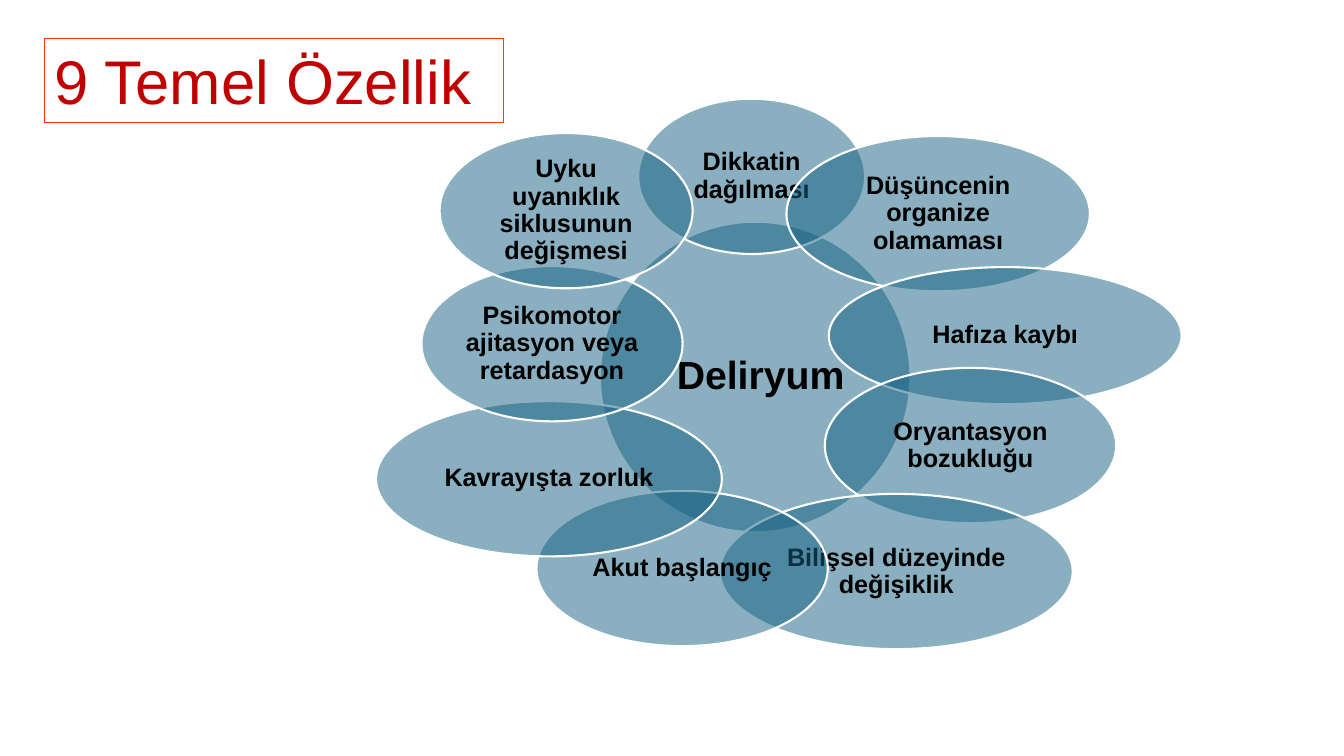
from lxml import etree
from pptx import Presentation
from pptx.dml.color import RGBColor
from pptx.enum.shapes import MSO_SHAPE
from pptx.enum.text import MSO_ANCHOR, MSO_AUTO_SIZE, PP_ALIGN
from pptx.oxml.ns import qn
from pptx.util import Inches, Pt

# Content
TITLE = "9 Temel Özellik"
CENTER = (" Deliryum", 5.95, 2.2, 3.08, 3.08)
# Features, clockwise from the top: text, left, top, width
FEATURES = [
    ("Dikkatin dağılması", 6.33, 0.98, 2.25),
    ("Düşüncenin organize olamaması", 7.8, 1.35, 3.01),
    ("Hafıza kaybı", 8.22, 2.65, 3.5),
    ("Oryantasyon bozukluğu", 8.18, 3.65, 2.89),
    ("Bilişsel düzeyinde değişiklik", 7.14, 4.9, 3.5),
    ("Akut başlangıç", 5.32, 4.87, 2.89),
    ("Kavrayışta zorluk", 3.73, 3.98, 3.43),
    ("Psikomotor ajitasyon veya retardasyon", 4.18, 2.64, 2.59),
    ("Uyku uyanıklık siklusunun değişmesi", 4.36, 1.32, 2.51),
]
FEATURE_HEIGHT = 1.54
HEIGHTS = {"Hafıza kaybı": 1.36}
FONT = "Arial"
COLORS = {"title": "C00000", "frame": "FF3300", "bubble": "156082",
          "outline": "FFFFFF", "text": "000000"}


def rgb(name):
    return RGBColor.from_string(COLORS[name])


def style(p, size, color, bold=False):
    p.font.name, p.font.size, p.font.bold = FONT, Pt(size), bold
    p.font.color.rgb = rgb(color)


def add_bubble(s, text, left, top, width, height, size, inset):
    sp = s.shapes.add_shape(MSO_SHAPE.OVAL, *map(Inches, (left, top, width, height)))
    sp.shadow.inherit = False
    sp.fill.solid()
    sp.fill.fore_color.rgb = rgb("bubble")
    color = sp.fill._xPr.find(qn("a:solidFill"))[0]
    etree.SubElement(color, qn("a:alpha"), val="50000")
    sp.line.color.rgb = rgb("outline")
    sp.line.width = Pt(1.5)

    tf = sp.text_frame
    tf.word_wrap = True
    tf.vertical_anchor = MSO_ANCHOR.MIDDLE
    tf.margin_left = tf.margin_right = tf.margin_top = tf.margin_bottom = Inches(inset)
    p = tf.paragraphs[0]
    p.text = text
    p.alignment = PP_ALIGN.CENTER
    p.line_spacing = 0.9
    style(p, size, "text", bold=True)


prs = Presentation()
prs.slide_width, prs.slide_height = Inches(13.33), Inches(7.5)
s = prs.slides.add_slide(prs.slide_layouts[5])

# Framed title
title = s.shapes.title
title.left, title.top, title.width, title.height = map(Inches, (0.44, 0.38, 4.55, 0.84))
title.line.color.rgb = rgb("frame")
title.line.width = Pt(0.75)
tf = title.text_frame
tf.word_wrap = True
tf.auto_size = MSO_AUTO_SIZE.NONE
tf.vertical_anchor = MSO_ANCHOR.TOP
p = tf.paragraphs[0]
p.text = TITLE
p.alignment = PP_ALIGN.LEFT
style(p, 44, "title")

# Central bubble, then the ring of features over it
add_bubble(s, *CENTER, size=28, inset=0.04)
for text, left, top, width in FEATURES:
    height = HEIGHTS.get(text, FEATURE_HEIGHT)
    add_bubble(s, text, left, top, width, height, size=18, inset=0.03)

prs.save("out.pptx")
